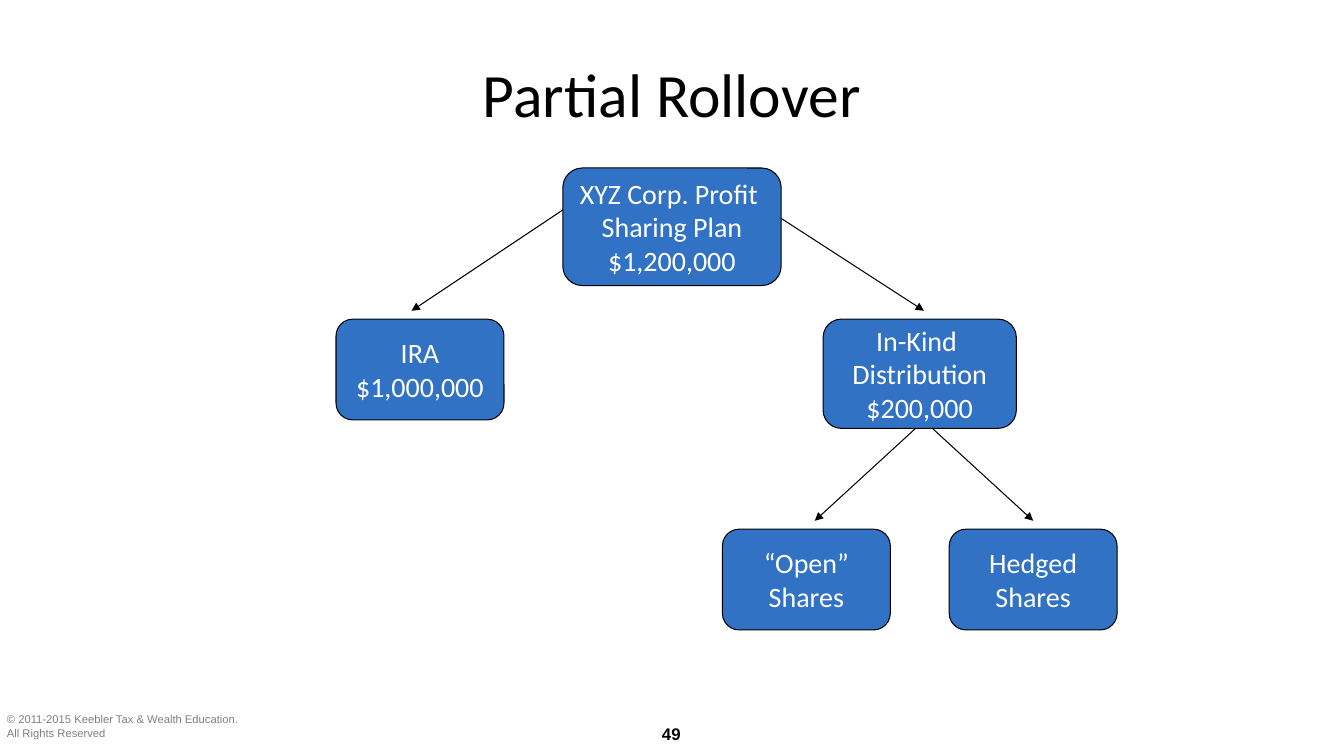
from dataclasses import dataclass

from lxml.etree import SubElement
from pptx import Presentation
from pptx.dml.color import RGBColor
from pptx.enum.shapes import MSO_CONNECTOR, MSO_SHAPE
from pptx.enum.text import MSO_ANCHOR, PP_ALIGN
from pptx.oxml.ns import qn
from pptx.slide import Slide
from pptx.text.text import TextFrame
from pptx.util import Emu, Inches, Pt

COLORS = {"box": "3172C4", "line": "000000", "text": "000000",
          "box_text": "FFFFFF", "copyright": "7F7F7F"}

# The slide is a grid of 160 columns by 90 rows, 12 cells to the inch
COLUMNS, ROWS, CELLS_PER_INCH = 160, 90, 12


@dataclass(frozen=True)
class Area:
    column: float
    row: float
    columns: float
    rows: float


@dataclass(frozen=True)
class Style:
    size: float
    color: str
    font: str = "Calibri"
    bold: bool = False
    align: PP_ALIGN = PP_ALIGN.CENTER


@dataclass(frozen=True)
class Box:
    lines: tuple[str, ...]
    area: Area


@dataclass(frozen=True)
class Label:
    lines: tuple[str, ...]
    area: Area
    style: Style
    anchor: MSO_ANCHOR = MSO_ANCHOR.TOP
    wrap: bool = True


@dataclass(frozen=True)
class Arrow:
    start: tuple[float, float]
    end: tuple[float, float]


BOX_STYLE = Style(20, "box_text")

BOXES = (
    Box(("XYZ Corp. Profit ", "Sharing Plan", "$1,200,000"), Area(67, 20, 26, 14)),
    Box(("IRA", "$1,000,000"), Area(40, 38, 20, 12)),
    Box(("In-Kind ", "Distribution", "$200,000"), Area(98, 38, 23, 13)),
    Box(("“Open”", "Shares"), Area(86, 63, 20, 12)),
    Box(("Hedged", "Shares"), Area(113, 63, 20, 12)),
)

ARROWS = (
    Arrow((67, 25), (49, 37)),
    Arrow((93, 26), (110, 37)),
    Arrow((109, 51), (97, 62)),
    Arrow((111, 51), (123, 62)),
)

LABELS = (
    Label(("Partial Rollover",), Area(8, 3.6, 144, 15), Style(44, "text"),
          MSO_ANCHOR.MIDDLE),
    Label(("© 2011-2015 Keebler Tax & Wealth Education.", "All Rights Reserved"),
          Area(-0.36, 84.24, 30.6, 4.44),
          Style(8, "copyright", "Arial", align=PP_ALIGN.LEFT), wrap=False),
    Label(("49",), Area(73.92, 85.56, 12, 3.6), Style(12, "text", "Arial", bold=True)),
)


def cells(count: float) -> Emu:
    return Inches(count / CELLS_PER_INCH)


def place(area: Area) -> tuple[Emu, Emu, Emu, Emu]:
    return cells(area.column), cells(area.row), cells(area.columns), cells(area.rows)


def color(name: str) -> RGBColor:
    return RGBColor.from_string(COLORS[name])


def write(frame: TextFrame, lines: tuple[str, ...], style: Style,
          anchor: MSO_ANCHOR, wrap: bool) -> None:
    frame.word_wrap = wrap
    frame.vertical_anchor = anchor
    frame.text = "\n".join(lines)
    for paragraph in frame.paragraphs:
        paragraph.alignment = style.align
        paragraph.font.name = style.font
        paragraph.font.size = Pt(style.size)
        paragraph.font.bold = style.bold
        paragraph.font.color.rgb = color(style.color)


def draw_box(slide: Slide, box: Box) -> None:
    shape = slide.shapes.add_shape(MSO_SHAPE.ROUNDED_RECTANGLE, *place(box.area))
    shape.shadow.inherit = False
    shape.fill.solid()
    shape.fill.fore_color.rgb = color("box")
    shape.line.color.rgb = color("line")
    shape.line.width = Pt(0.75)
    write(shape.text_frame, box.lines, BOX_STYLE, MSO_ANCHOR.MIDDLE, False)


def draw_arrow(slide: Slide, arrow: Arrow) -> None:
    points = [cells(value) for value in arrow.start + arrow.end]
    connector = slide.shapes.add_connector(MSO_CONNECTOR.STRAIGHT, *points)
    connector.line.color.rgb = color("line")
    connector.line.width = Pt(0.75)
    properties = connector._element.spPr
    SubElement(properties.find(qn("a:ln")), qn("a:tailEnd"), type="triangle")
    SubElement(properties, qn("a:effectLst"))


def draw_label(slide: Slide, label: Label) -> None:
    shape = slide.shapes.add_textbox(*place(label.area))
    write(shape.text_frame, label.lines, label.style, label.anchor, label.wrap)


def main() -> None:
    presentation = Presentation()
    presentation.slide_width = cells(COLUMNS)
    presentation.slide_height = cells(ROWS)
    slide = presentation.slides.add_slide(presentation.slide_layouts[6])

    # Rollover tree
    for box in BOXES:
        draw_box(slide, box)
    for arrow in ARROWS:
        draw_arrow(slide, arrow)

    # Title and footer
    for label in LABELS:
        draw_label(slide, label)

    presentation.save("out.pptx")


if __name__ == "__main__":
    main()
